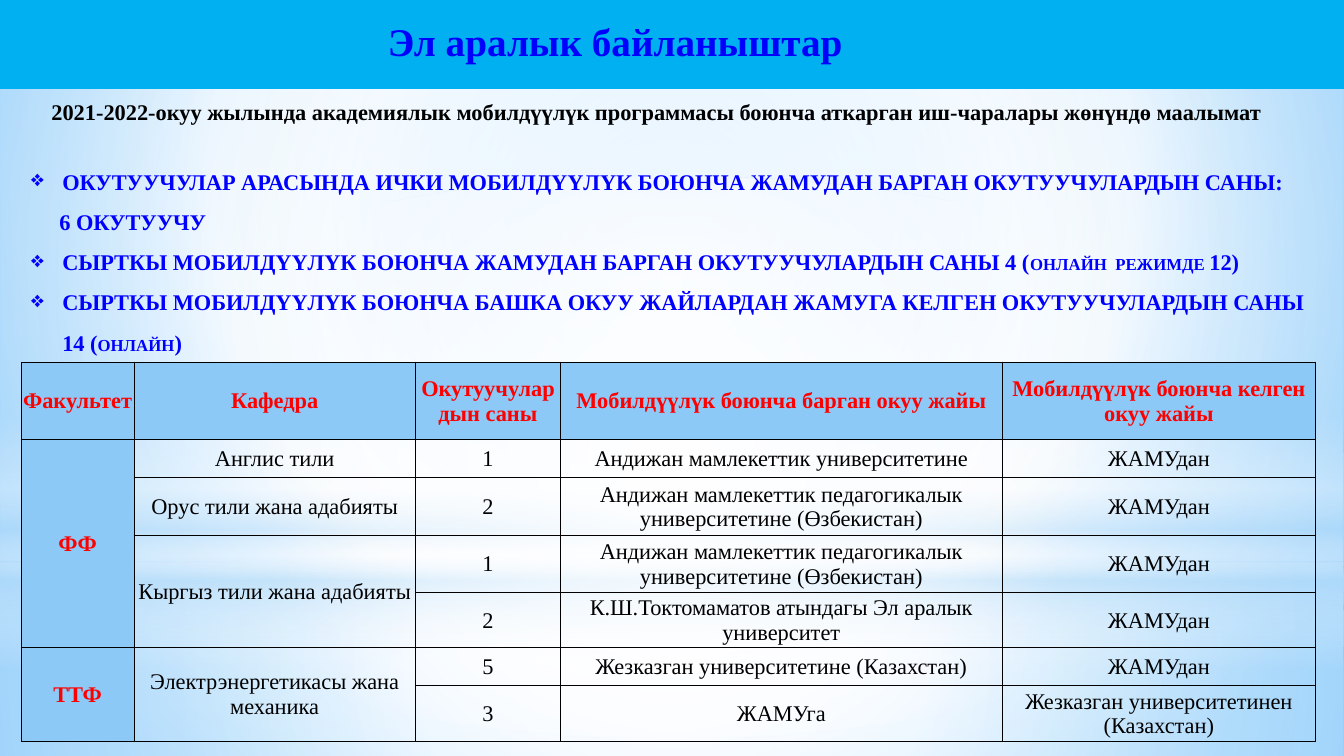
import pptx
import pptx.util
import pptx.dml.color
import pptx.enum.shapes
import pptx.enum.text
import pptx.oxml
import pptx.oxml.ns

Inches = pptx.util.Inches
Pt = pptx.util.Pt
SHAPE = pptx.enum.shapes.MSO_SHAPE
ALIGN = pptx.enum.text.PP_ALIGN
ANCHOR = pptx.enum.text.MSO_ANCHOR
NS = pptx.oxml.ns.nsdecls("a")

BLUE, RED, BLACK = "0000FF", "FF0000", "000000"
BAND, HEAD_FILL = "00B0F0", "8CC9F7"
WIDTH, HEIGHT = 13.33, 7.5

# Background: stops are (position, colour, opacity)
BACKDROP = [(0, "9ED5FF", 100), (60, "FFFFFF", 100), (100, "5BB9FF", 100)]
CENTRE = (50, 50, 50, 50)
GLOWS = [
    (SHAPE.RECTANGLE, 5.58, 1.92,
     [(0, "FFFFFF", 91), (37, "FFFFFF", 76), (100, "B4DCFA", 79)], CENTRE),
    (SHAPE.RECTANGLE, 0, 5.58,
     [(0, "FFFFFF", 89), (48, "FFFFFF", 62), (100, "B4DCFA", 79)], CENTRE),
    (SHAPE.RECTANGLE, 4.12, 2.5,
     [(0, "FFFFFF", 0), (29, "FFFFFF", 30), (45, "B4DCFA", 40),
      (55, "FFFFFF", 26), (65, "B4DCFA", 60), (100, "FFFFFF", 0)], None),
    (SHAPE.OVAL, 1.75, 5.58, [(0, "FFFFFF", 100), (56, "FFFFFF", 0)], CENTRE),
]

# Points: (bulleted, [(text, size)])
POINTS = [
    (True, [("ОКУТУУЧУЛАР АРАСЫНДА ИЧКИ МОБИЛДҮҮЛҮК БОЮНЧА ЖАМУДАН БАРГАН "
             "ОКУТУУЧУЛАРДЫН САНЫ:", 16)]),
    (False, [("6 ОКУТУУЧУ", 16)]),
    (True, [("СЫРТКЫ МОБИЛДҮҮЛҮК БОЮНЧА ЖАМУДАН БАРГАН ОКУТУУЧУЛАРДЫН САНЫ 4 (", 16),
            ("ОНЛАЙН  РЕЖИМДЕ ", 12), ("12)", 16)]),
    (True, [("СЫРТКЫ МОБИЛДҮҮЛҮК БОЮНЧА БАШКА ОКУУ ЖАЙЛАРДАН ЖАМУГА КЕЛГЕН "
             "ОКУТУУЧУЛАРДЫН САНЫ 14 (", 16), ("ОНЛАЙН", 12), (")", 16)]),
]

# Table: None continues the cell above
COLS = [1.12, 2.79, 1.44, 4.38, 3.11]
ROWS = [0.77, 0.38, 0.57, 0.57, 0.54, 0.38, 0.55]
ANDIJAN = "Андижан мамлекеттик педагогикалык университетине (Өзбекистан)"
CELLS = [
    ["Факультет", "Кафедра", "Окутуучулардын саны",
     "Мобилдүүлүк боюнча барган окуу жайы", "Мобилдүүлүк боюнча келген окуу жайы"],
    ["ФФ", "Англис тили", "1", "Андижан мамлекеттик университетине", "ЖАМУдан"],
    [None, "Орус тили жана адабияты", "2", ANDIJAN, "ЖАМУдан"],
    [None, "Кыргыз тили жана адабияты", "1", ANDIJAN, "ЖАМУдан"],
    [None, None, "2", "К.Ш.Токтомаматов атындагы Эл аралык университет", "ЖАМУдан"],
    ["ТТФ", "Электрэнергетикасы жана механика", "5",
     "Жезказган университетине (Казахстан)", "ЖАМУдан"],
    [None, None, "3", "ЖАМУга", "Жезказган университетинен (Казахстан)"],
]


def rgb(value):
    return pptx.dml.color.RGBColor.from_string(value)


def set_attrs(obj, **values):
    for name, value in values.items():
        setattr(obj, name, value)


def set_gradient(fill, owner, stops, focus):
    """Radial towards focus (left, top, right, bottom), or downwards without one."""
    fill.gradient()
    grad = owner.xpath(".//a:gradFill")[0]
    gs = "".join(
        f'<a:gs pos="{pos * 1000}"><a:srgbClr val="{color}">'
        f'<a:alpha val="{alpha * 1000}"/></a:srgbClr></a:gs>'
        for pos, color, alpha in stops)
    if focus:
        l, t, r, b = (side * 1000 for side in focus)
        way = (f'<a:path path="circle"><a:fillToRect l="{l}" t="{t}" '
               f'r="{r}" b="{b}"/></a:path>')
    else:
        way = '<a:lin ang="5400000" scaled="0"/>'
    grad.getparent().replace(grad, pptx.oxml.parse_xml(
        f'<a:gradFill {NS} rotWithShape="1"><a:gsLst>{gs}</a:gsLst>{way}</a:gradFill>'))


def add_glow(s, kind, top, height, stops, focus):
    sp = s.shapes.add_shape(kind, 0, Inches(top), Inches(WIDTH), Inches(height))
    sp.shadow.inherit = False
    sp.line.fill.background()
    set_gradient(sp.fill, sp.element, stops, focus)


def add_band(s, y):
    line = s.shapes.add_connector(pptx.enum.shapes.MSO_CONNECTOR.STRAIGHT,
                                  0, Inches(y), Inches(WIDTH), Inches(y))
    set_attrs(line.line, width=Pt(46.25))
    line.line.color.rgb = rgb(BAND)
    line.element.spPr.append(pptx.oxml.parse_xml(f"<a:effectLst {NS}/>"))


def add_run(p, text, size, color, bold=True):
    r = p.add_run()
    r.text = text
    set_attrs(r.font, name="Times New Roman", size=Pt(size), bold=bold)
    r.font.color.rgb = rgb(color)


def add_box(s, left, top, width, height, **format_values):
    box = s.shapes.add_textbox(*map(Inches, (left, top, width, height)))
    set_attrs(box.text_frame, **format_values)
    return box.text_frame


def add_points(s):
    tf = add_box(s, 0.21, 1.39, 12.97, 2.28, word_wrap=True,
                 vertical_anchor=ANCHOR.MIDDLE)
    for i, (bulleted, runs) in enumerate(POINTS):
        p = tf.add_paragraph() if i else tf.paragraphs[0]
        p.line_spacing = 1.5
        pPr = p._p.get_or_add_pPr()
        pPr.set("marL", str(Inches(0.31 if bulleted else 0.28)))
        if bulleted:
            pPr.set("indent", str(Inches(-0.31)))
            pPr.append(pptx.oxml.parse_xml(f'<a:buChar {NS} char="❖"/>'))
        for text, size in runs:
            add_run(p, text, size, BLUE)


def set_borders(cell):
    tcPr = cell._tc.get_or_add_tcPr()
    for i, side in enumerate("LRTB"):
        tcPr.insert(i, pptx.oxml.parse_xml(
            f'<a:ln{side} {NS} w="6350"><a:solidFill><a:srgbClr val="{BLACK}"/>'
            f'</a:solidFill></a:ln{side}>'))


def add_mobility_table(s):
    table = s.shapes.add_table(len(ROWS), len(COLS), Inches(0.21), Inches(3.59),
                               Inches(sum(COLS)), Inches(sum(ROWS))).table
    set_attrs(table, first_row=False, horz_banding=False)
    for col, width in zip(table.columns, COLS):
        col.width = Inches(width)
    for row, height in zip(table.rows, ROWS):
        row.height = Inches(height)
    for i, texts in enumerate(CELLS):
        for j, text in enumerate(texts):
            cell = table.cell(i, j)
            heading = i == 0 or j == 0
            set_attrs(cell, vertical_anchor=ANCHOR.MIDDLE, margin_left=Inches(0.01),
                      margin_right=Inches(0.01), margin_top=Inches(0.01), margin_bottom=0)
            if heading:
                cell.fill.solid()
                cell.fill.fore_color.rgb = rgb(HEAD_FILL)
            else:
                cell.fill.background()
            set_borders(cell)
            if text is None:
                continue
            p = cell.text_frame.paragraphs[0]
            p.alignment = ALIGN.CENTER
            add_run(p, text, 16, RED if heading else BLACK, heading)
            # Join with the empty cells below
            last = i
            while last + 1 < len(CELLS) and CELLS[last + 1][j] is None:
                last += 1
            if last > i:
                cell.merge(table.cell(last, j))


def main():
    prs = pptx.Presentation()
    set_attrs(prs, slide_width=Inches(WIDTH), slide_height=Inches(HEIGHT))
    s = prs.slides.add_slide(prs.slide_layouts[6])

    # Backdrop
    set_gradient(s.background.fill, s.element, BACKDROP, (20, 10, 20, 60))
    for glow in GLOWS:
        add_glow(s, *glow)

    # Title band
    for y in (0.22, 0.56):
        add_band(s, y)
    tf = add_box(s, 3.75, 0.12, 4.86, 0.57, word_wrap=False)
    add_run(tf.paragraphs[0], "Эл аралык байланыштар", 28, BLUE)

    # Subtitle
    tf = add_box(s, 0.29, 0.92, 12.44, 0.37, word_wrap=True)
    tf.paragraphs[0].alignment = ALIGN.CENTER
    add_run(tf.paragraphs[0], "2021-2022-окуу жылында академиялык мобилдүүлүк программасы "
            "боюнча аткарган иш-чаралары жөнүндө маалымат", 16, BLACK)

    # Body
    add_points(s)
    add_mobility_table(s)
    prs.save("out.pptx")


if __name__ == "__main__":
    main()
